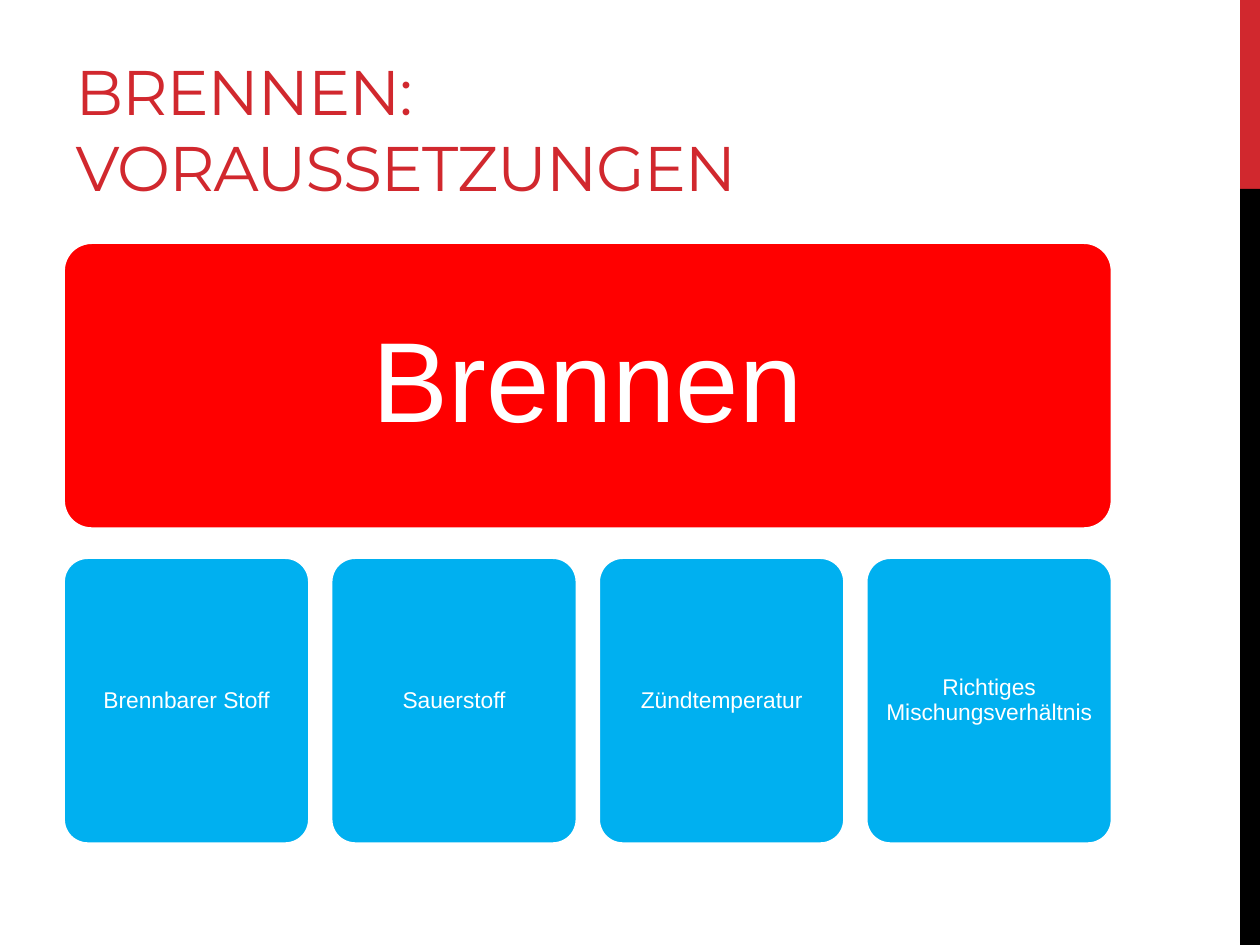
"""Build a slide showing the four conditions for burning."""
from pptx import Presentation
from pptx.dml.color import RGBColor
from pptx.enum.shapes import MSO_SHAPE as Shape
from pptx.enum.text import MSO_ANCHOR as Anchor, MSO_AUTO_SIZE as AutoSize, PP_ALIGN as Align
from pptx.util import Cm, Pt


def paint(color_format, color):
    color_format.rgb = RGBColor.from_string(color)


def add_block(kind, left, top, width, height, color):
    shape = slide.shapes.add_shape(kind, Cm(left), Cm(top), Cm(width), Cm(height))
    shape.shadow.inherit = False
    shape.fill.solid()
    paint(shape.fill.fore_color, color)
    shape.line.fill.background()
    return shape


presentation = Presentation()
presentation.slide_width, presentation.slide_height = Cm(25.4), Cm(19.05)
slide = presentation.slides.add_slide(presentation.slide_layouts[5])

add_block(Shape.RECTANGLE, 25, 0, 0.4, 3.81, "D1282E")
add_block(Shape.RECTANGLE, 25, 3.81, 0.4, 15.24, "000000")

title = slide.shapes.title
title.left, title.top, title.width, title.height = Cm(1.27), Cm(0.43), Cm(16.08), Cm(3.81)
frame = title.text_frame
frame.word_wrap = True
frame.auto_size = AutoSize.NONE
frame.vertical_anchor = Anchor.BOTTOM
paragraph = frame.paragraphs[0]
paragraph.alignment = Align.LEFT
run = paragraph.add_run()
run.text = "BRENNEN: VORAUSSETZUNGEN"
run.font.name, run.font.size = "Montserrat", Pt(36)
paint(run.font.color, "D1282E")
run._r.get_or_add_rPr().set("spc", "-60")

left, total_width, box_width, box_height = 1.27, 21.16, 4.98, 5.79
conditions = ["Brennbarer Stoff", "Sauerstoff", "Zündtemperatur", "Richtiges Mischungsverhältnis"]
step = (total_width - box_width) / (len(conditions) - 1)
boxes = [("Brennen", left, 4.88, total_width, "FF0000", 65, 0.69)]
for index, condition in enumerate(conditions):
    boxes.append((condition, left + index * step, 11.23, box_width, "00B0F0", 13, 0.13))

for text, box_left, top, width, color, size, inset in boxes:
    box = add_block(Shape.ROUNDED_RECTANGLE, box_left, top, width, box_height, color)
    box.adjustments[0] = 0.1
    paint(box.line.color, "FFFFFF")
    box.line.width = Pt(2.25)
    frame = box.text_frame
    frame.word_wrap = True
    frame.vertical_anchor = Anchor.MIDDLE
    frame.margin_left = frame.margin_right = frame.margin_top = frame.margin_bottom = Cm(inset)
    paragraph = frame.paragraphs[0]
    paragraph.alignment = Align.CENTER
    paragraph.line_spacing = 0.9
    run = paragraph.add_run()
    run.text = text
    run.font.name, run.font.size = "Arial", Pt(size)
    paint(run.font.color, "FFFFFF")

presentation.save("out.pptx")
